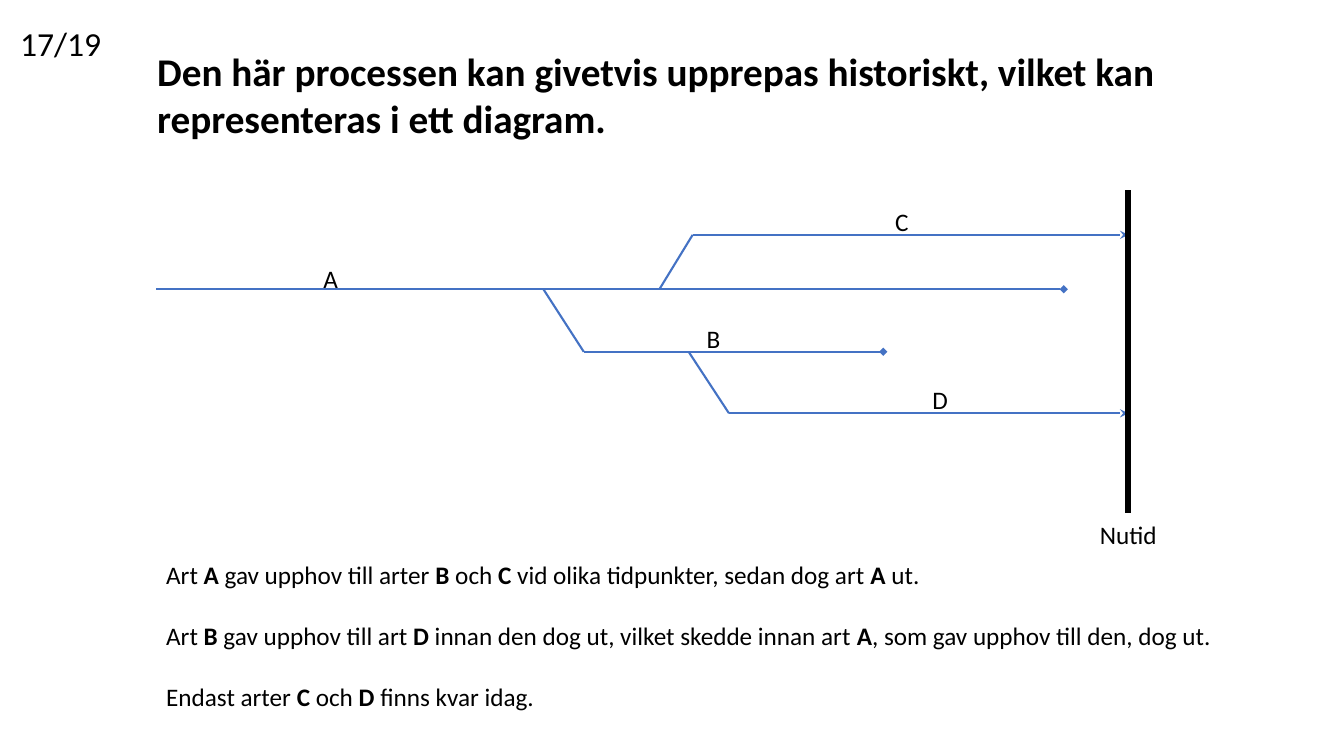
from lxml.etree import SubElement as Sub
from pptx import Presentation as Deck
from pptx.dml.color import RGBColor as Rgb
from pptx.enum.shapes import MSO_CONNECTOR as Link
from pptx.enum.text import MSO_AUTO_SIZE as Fit
from pptx.oxml.ns import qn
from pptx.util import Inches, Pt

CELL = 0.1
BLUE = "4472C4"
BLACK = "000000"
NOW = 111.9
TREE = [
    ("A", 28.7, None, None, 15.5, 105.5, "diamond", (31.1, 25.6, 3.6)),
    ("B", 34.9, 53.9, 28.7, 57.9, 87.6, "diamond", (69.1, 31.6, 3.4)),
    ("C", 23.3, 65.4, 28.7, 68.7, NOW, "stealth", (87.8, 20, 3.4)),
    ("D", 41, 68.3, 34.9, 72.3, NOW, "stealth", (91.5, 37.6, 3.6)),
]
NOTES = [
    "Art *A* gav upphov till arter *B* och *C* vid olika tidpunkter, sedan dog art *A* ut.",
    "Art *B* gav upphov till art *D* innan den dog ut, vilket skedde innan art *A*, "
    "som gav upphov till den, dog ut.",
    "Endast arter *C* och *D* finns kvar idag.",
]
TITLE = ("Den här processen kan givetvis upprepas historiskt, "
         "vilket kan representeras i ett diagram.")


def tint(code):
    return Rgb.from_string(code)


def grid(*cells):
    return [Inches(cell * CELL) for cell in cells]


def write(para, text, size=18, bold=False, color=BLACK, face="Calibri"):
    for step, part in enumerate(text.split("*")):
        run = para.add_run()
        run.text = part
        font = run.font
        font.name, font.size = face, Pt(size)
        font.bold = bold or step % 2 == 1
        font.color.rgb = tint(color)


class Page:
    """Draw styled parts on one slide, with lengths in grid cells."""

    def __init__(self, slide):
        self.shapes = slide.shapes

    def text(self, box, *lines, wrap=False, gap=0, **style):
        frame = self.shapes.add_textbox(*grid(*box)).text_frame
        frame.word_wrap = wrap
        frame.auto_size = Fit.SHAPE_TO_FIT_TEXT
        for step, line in enumerate(lines):
            para = frame.add_paragraph() if step else frame.paragraphs[0]
            para.space_before = Pt(gap if step else 0)
            write(para, line, **style)

    def line(self, start, end, color=BLUE, width=1.5, tail=None):
        link = self.shapes.add_connector(Link.STRAIGHT, *grid(*start, *end))
        link.line.color.rgb = tint(color)
        link.line.width = Pt(width)
        if tail:
            Sub(link.line._get_or_add_ln(), qn("a:tailEnd"), type=tail)
        Sub(link._element.spPr, qn("a:effectLst"))

    def branch(self, name, row, stem, root, left, right, tail, label):
        if stem is not None:
            self.line((stem, root), (left, row))
        self.line((left, row), (right, row), tail=tail)
        self.text((*label, 4), name)


def main():
    deck = Deck()
    deck.slide_width, deck.slide_height = Inches(13.33), Inches(7.5)
    page = Page(deck.slides.add_slide(deck.slide_layouts[6]))
    for item in TREE:
        page.branch(*item)
    page.line((NOW, 18.9), (NOW, 50.9), color=BLACK, width=4.5)
    page.text((108.1, 51, 7.7, 4), "Nutid")
    page.text((15.5, 55, 107, 16.2), *NOTES, gap=22)
    page.text((14.6, 4.2, 101.2, 10.4), TITLE, wrap=True, size=28, bold=True)
    page.text((1, 1.8, 10.1, 5), "17/19", size=24)
    deck.save("out.pptx")


if __name__ == "__main__":
    main()
